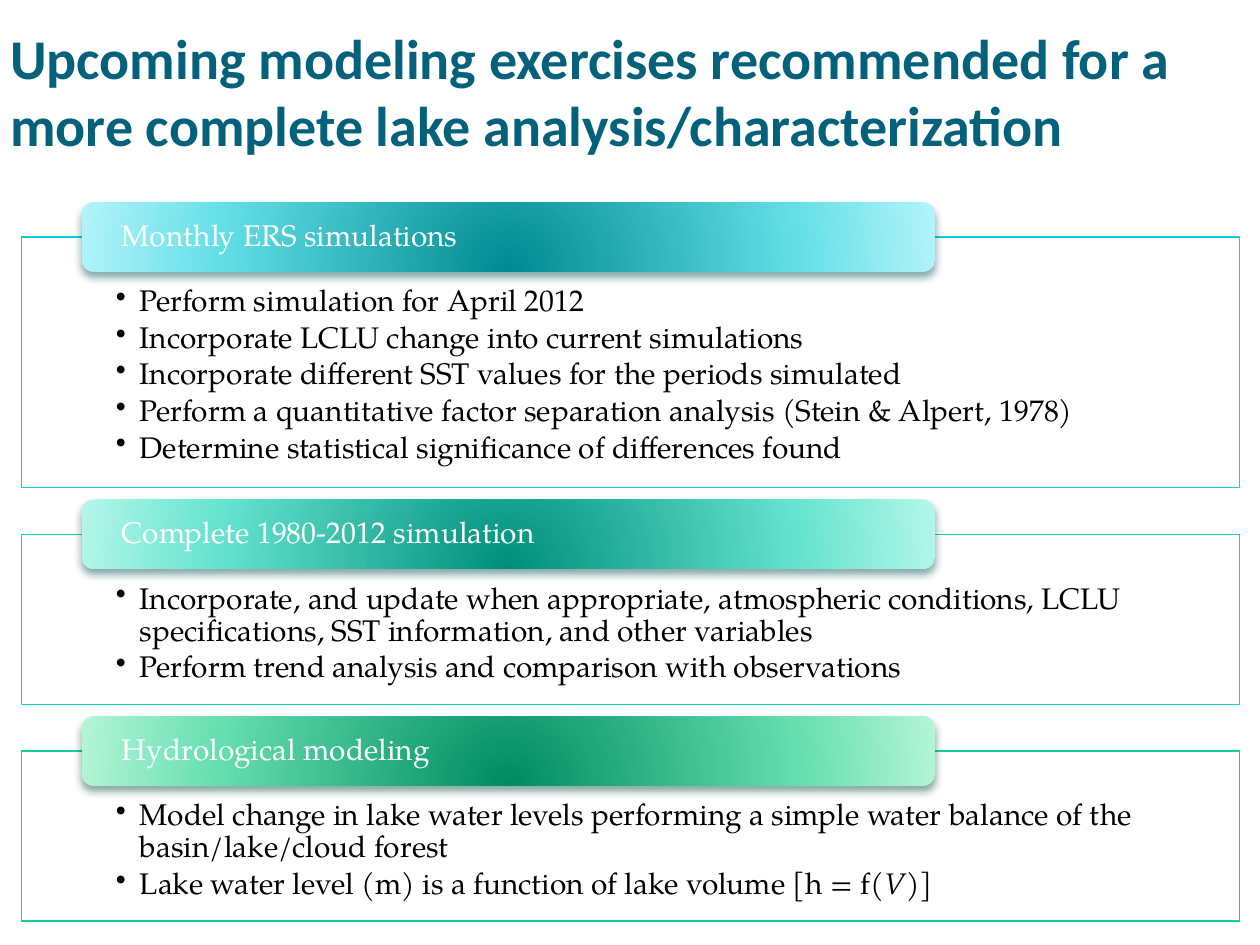
from dataclasses import dataclass

from lxml.etree import SubElement
from pptx import Presentation
from pptx.dml.color import RGBColor
from pptx.enum.shapes import MSO_SHAPE
from pptx.enum.text import MSO_ANCHOR, PP_ALIGN
from pptx.oxml import parse_xml
from pptx.oxml.ns import nsdecls, qn
from pptx.util import Inches, Pt


@dataclass(frozen=True)
class Theme:
    title_font: str = "Calibri"
    body_font: str = "TeX Gyre Pagella"
    title_size: int = 32
    body_size: int = 17
    title: str = "04617B"
    text: str = "000000"
    white: str = "FFFFFF"


THEME = Theme()

# Heading, frame height, line colour, gradient colours, shadow colour, bullets (as runs)
SECTIONS = [
    ("Monthly ERS simulations", 1.99, "0BD0D9", ("008A91", "64DFE7", "B1F3F9"), "024B4E", [
        ["Perform simulation for April 2012"],
        ["Incorporate LCLU change into current simulations"],
        ["Incorporate different SST values for the periods simulated"],
        ["Perform a quantitative factor separation analysis (Stein & Alpert, 1978)"],
        ["Determine statistical significance of differences found"],
    ]),
    ("Complete 1980-2012 simulation", 1.35, "0ED4BD", ("008F7C", "65E3CE", "B1F6E8"), "034C44", [
        ["Incorporate, and update when appropriate, atmospheric conditions, LCLU "
         "specifications, SST information, and other variables"],
        ["Perform trend analysis and comparison with observations"],
    ]),
    ("Hydrological modeling", 1.35, "10CF9B", ("008C60", "65DEB0", "B2F4D6"), "044A37", [
        ["Model change in lake water levels performing a simple water balance of the "
         "basin/lake/cloud forest"],
        ["Lake water level (m) is a function of lake volume [h = f(", "V", ")]"],
    ]),
]
FIRST_TOP, FRAME_GAP = 1.88, 0.37
HEADER_HEIGHT = 0.55


def set_font(para, name, size, color):
    para.alignment = PP_ALIGN.LEFT
    para.font.name = name
    para.font.size = Pt(size)
    para.font.color.rgb = RGBColor.from_string(color)


def set_frame(frame, anchor, left, top, right, bottom):
    """Wrap the text and set its anchor and insets in inches."""
    frame.word_wrap = True
    frame.vertical_anchor = anchor
    frame.margin_left, frame.margin_top = Inches(left), Inches(top)
    frame.margin_right, frame.margin_bottom = Inches(right), Inches(bottom)


deck = Presentation()
deck.slide_width, deck.slide_height = Inches(10), Inches(7.5)
slide = deck.slides.add_slide(deck.slide_layouts[6])

title = slide.shapes.add_textbox(Inches(0.08), Inches(0), Inches(9.92), Inches(1.25))
set_frame(title.text_frame, MSO_ANCHOR.BOTTOM, 0, 0.05, 0, 0)
para = title.text_frame.paragraphs[0]
para.text = "Upcoming modeling exercises recommended for a more complete lake analysis/characterization"
set_font(para, THEME.title_font, THEME.title_size, THEME.title)
para.font.bold = True

top = FIRST_TOP
for heading, height, line_color, gradient, shadow_color, bullets in SECTIONS:
    box = slide.shapes.add_shape(
        MSO_SHAPE.RECTANGLE, Inches(0.17), Inches(top), Inches(9.67), Inches(height))
    box.shadow.inherit = False
    box.fill.solid()
    box.fill.fore_color.rgb = RGBColor.from_string(THEME.white)
    box.line.color.rgb = RGBColor.from_string(line_color)
    box.line.width = Pt(0.75)
    set_frame(box.text_frame, MSO_ANCHOR.TOP, 0.75, 0.39, 0.75, 0.13)
    for index, runs in enumerate(bullets):
        para = box.text_frame.paragraphs[0] if index == 0 else box.text_frame.add_paragraph()
        para.line_spacing = 0.9
        para.space_after = Pt(0.15 * THEME.body_size)
        properties = para._p.get_or_add_pPr()
        properties.set("marL", str(Inches(0.19)))
        properties.set("indent", str(-Inches(0.19)))
        SubElement(properties, qn("a:buChar"), char="•")
        set_font(para, THEME.body_font, THEME.body_size, THEME.text)
        for text in runs:
            span = para.add_run()
            span.text = text
            if text == "V":
                span.font.italic = True

    header = slide.shapes.add_shape(
        MSO_SHAPE.ROUNDED_RECTANGLE, Inches(0.65), Inches(top - HEADER_HEIGHT / 2),
        Inches(6.77), Inches(HEADER_HEIGHT))
    header.line.fill.background()
    header.shadow.inherit = False
    stops = "".join(
        f'<a:gs pos="{position * 1000}"><a:srgbClr val="{color}"/></a:gs>'
        for position, color in zip((0, 68, 100), gradient))
    shape_properties = header._element.spPr
    shape_properties.find(qn("a:prstGeom")).addnext(parse_xml(
        f'<a:gradFill {nsdecls("a")} rotWithShape="1"><a:gsLst>{stops}</a:gsLst>'
        '<a:path path="circle"><a:fillToRect l="50000" t="130000" r="50000" b="-30000"/>'
        '</a:path></a:gradFill>'))
    shape_properties.find(qn("a:effectLst")).append(parse_xml(
        f'<a:outerShdw {nsdecls("a")} blurRad="{Pt(4.5)}" dist="{Pt(3)}" dir="5400000" '
        f'rotWithShape="0"><a:srgbClr val="{shadow_color}"><a:alpha val="48000"/></a:srgbClr>'
        '</a:outerShdw>'))
    set_frame(header.text_frame, MSO_ANCHOR.MIDDLE, 0.29, 0, 0.29, 0)
    para = header.text_frame.paragraphs[0]
    para.text = heading
    para.line_spacing = 0.9
    set_font(para, THEME.body_font, THEME.body_size, THEME.white)

    top += height + FRAME_GAP

deck.save("out.pptx")
